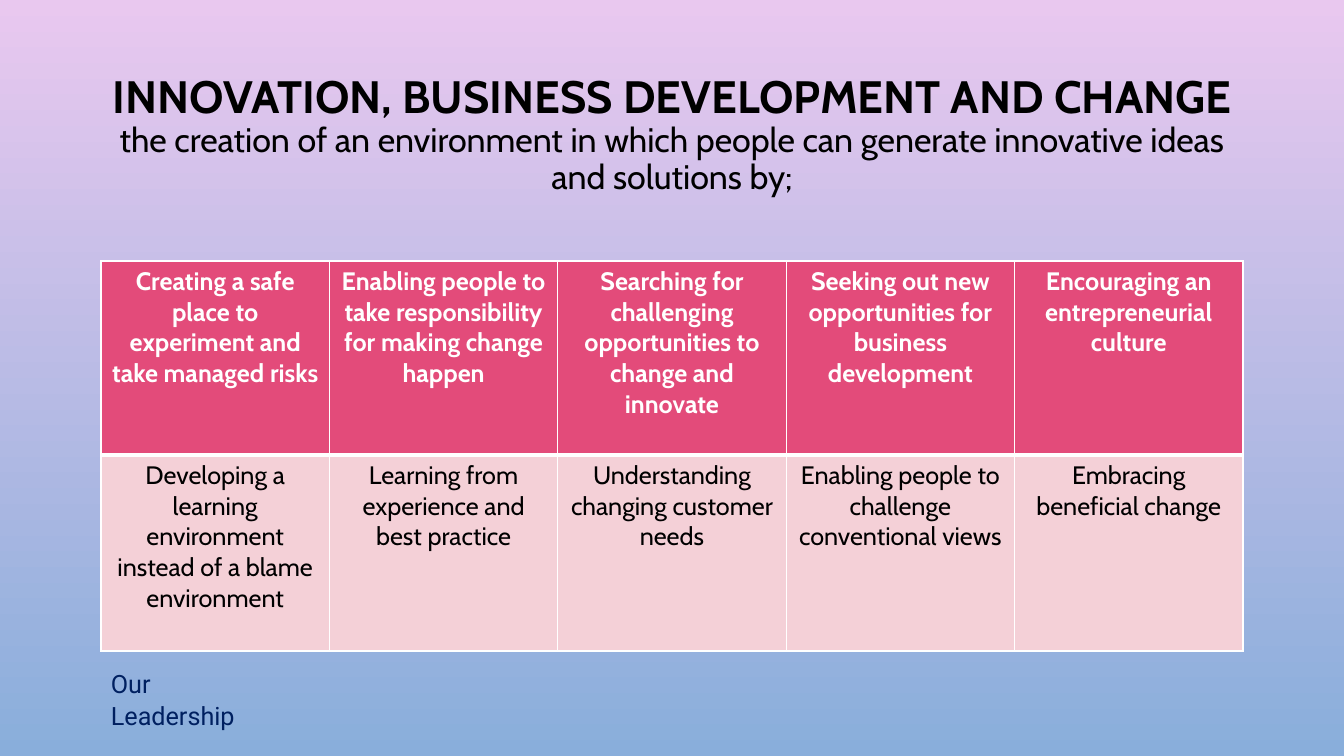
from lxml import etree
from pptx import Presentation
from pptx.dml.color import RGBColor
from pptx.enum.text import MSO_ANCHOR, PP_ALIGN
from pptx.oxml.ns import qn
from pptx.util import Pt

TOP = MSO_ANCHOR.TOP
LEFT, MID = PP_ALIGN.LEFT, PP_ALIGN.CENTER

# Content
TITLE = "INNOVATION, BUSINESS DEVELOPMENT AND CHANGE"
INTRO = ("the creation of an environment in which people can generate "
         "innovative ideas and solutions by;")
HEAD = [
    "Creating a safe place to experiment and take managed risks",
    "Enabling people to take responsibility for making change happen",
    "Searching for challenging opportunities to change and innovate",
    "Seeking out new opportunities for business development",
    "Encouraging an entrepreneurial culture",
]
BODY = [
    "Developing a learning environment instead of a blame environment",
    "Learning from experience and best practice",
    "Understanding changing customer needs",
    "Enabling people to challenge conventional views",
    "Embracing beneficial change",
]
FOOT = "Our Leadership"

# Row style: text, fill, text colour, bold, top and bottom border in points
ROWS = [
    (HEAD, "E34B7A", "FFFFFF", True, 1, 3),
    (BODY, "F4D0D7", "000000", False, 3, 1),
]
SKY = ["E9C8EF", "89AEDB"]

# Layout in px
WIDE, HIGH = 1344, 756
EDGE, SPAN = 101, 1142
ROW_TOP, ROW_HIGH = 261, [194, 196]


def px(n):
    return round(n * 914400 / 100.8)


def rgb(code):
    return RGBColor.from_string(code)


def write(para, text, size=18, face="Cabin", color="000000", bold=False,
          align=MID, line=None, after=None):
    run = para.add_run()
    run.text = text
    font = run.font
    font.size, font.name, font.bold = Pt(size), face, bold
    font.color.rgb = rgb(color)
    para.alignment = align
    para.line_spacing = line
    if after is not None:
        para.space_after = Pt(after)


def box(slide, x, y, w, h):
    frame = slide.shapes.add_textbox(px(x), px(y), px(w), px(h)).text_frame
    frame.word_wrap = True
    frame.vertical_anchor = TOP
    return frame


def border(cell, top, low):
    props = cell._tc.get_or_add_tcPr()
    for side, size in zip("LRTB", (1, 1, top, low)):
        line = etree.SubElement(props, qn(f"a:ln{side}"), w=str(Pt(size)))
        fill = etree.SubElement(line, qn("a:solidFill"))
        etree.SubElement(fill, qn("a:srgbClr"), val="FFFFFF")


deck = Presentation()
deck.slide_width, deck.slide_height = px(WIDE), px(HIGH)
slide = deck.slides.add_slide(deck.slide_layouts[6])

# Background, running from top to bottom
back = slide.background.fill
back.gradient()
back.gradient_angle = 270
for stop, code in zip(back.gradient_stops, SKY):
    stop.color.rgb = rgb(code)

# Heading
frame = box(slide, EDGE, 69, SPAN, 176)
write(frame.paragraphs[0], TITLE, size=32.4, bold=True, line=0.9)
write(frame.add_paragraph(), INTRO, size=24.3, line=0.9)

# Table
table = slide.shapes.add_table(len(ROWS), len(HEAD), px(EDGE), px(ROW_TOP),
                               px(SPAN), px(sum(ROW_HIGH))).table
table.horz_banding = False
for r, (texts, fill, color, bold, top, low) in enumerate(ROWS):
    table.rows[r].height = px(ROW_HIGH[r])
    for c, text in enumerate(texts):
        cell = table.cell(r, c)
        border(cell, top, low)
        cell.fill.solid()
        cell.fill.fore_color.rgb = rgb(fill)
        write(cell.text_frame.paragraphs[0], text, color=color, bold=bold)

# Footer
frame = box(slide, EDGE, 661, 180, 43)
write(frame.paragraphs[0], FOOT, face="Roboto", color="002060", align=LEFT,
      line=1.07, after=8)

deck.save("out.pptx")
